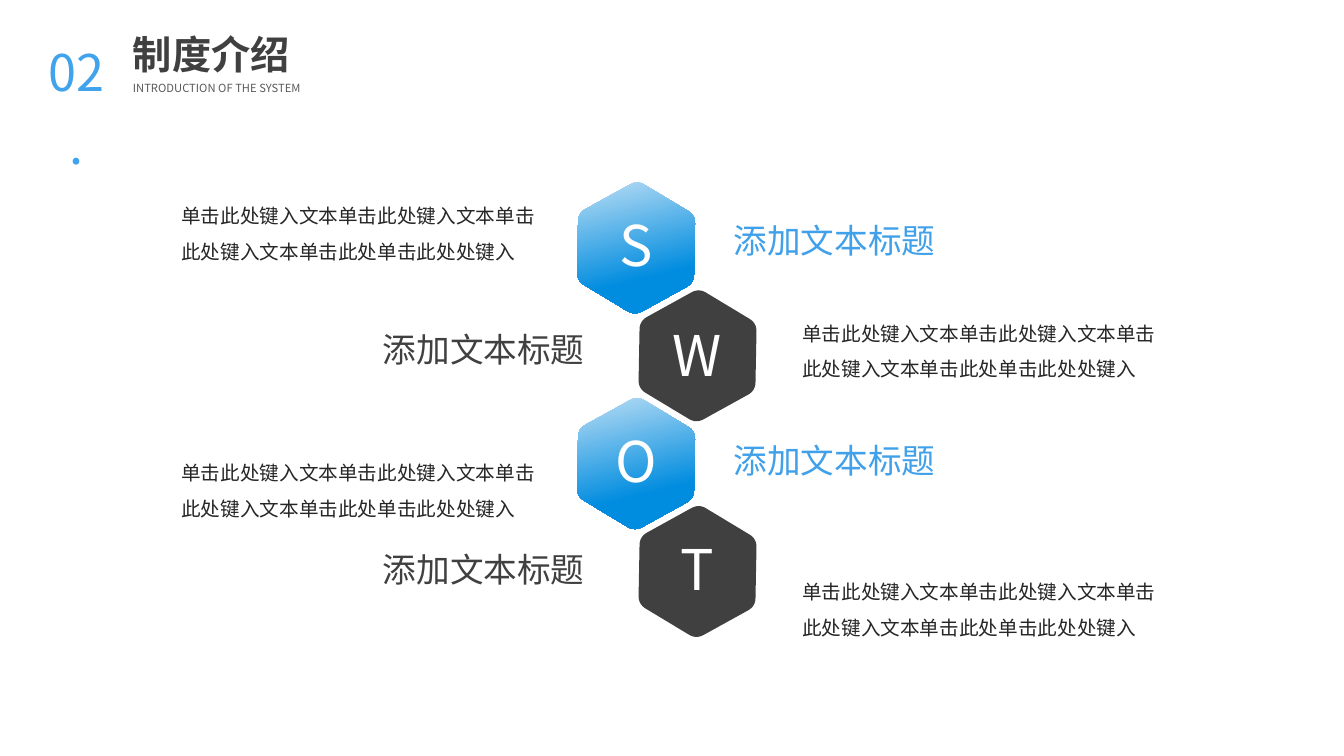
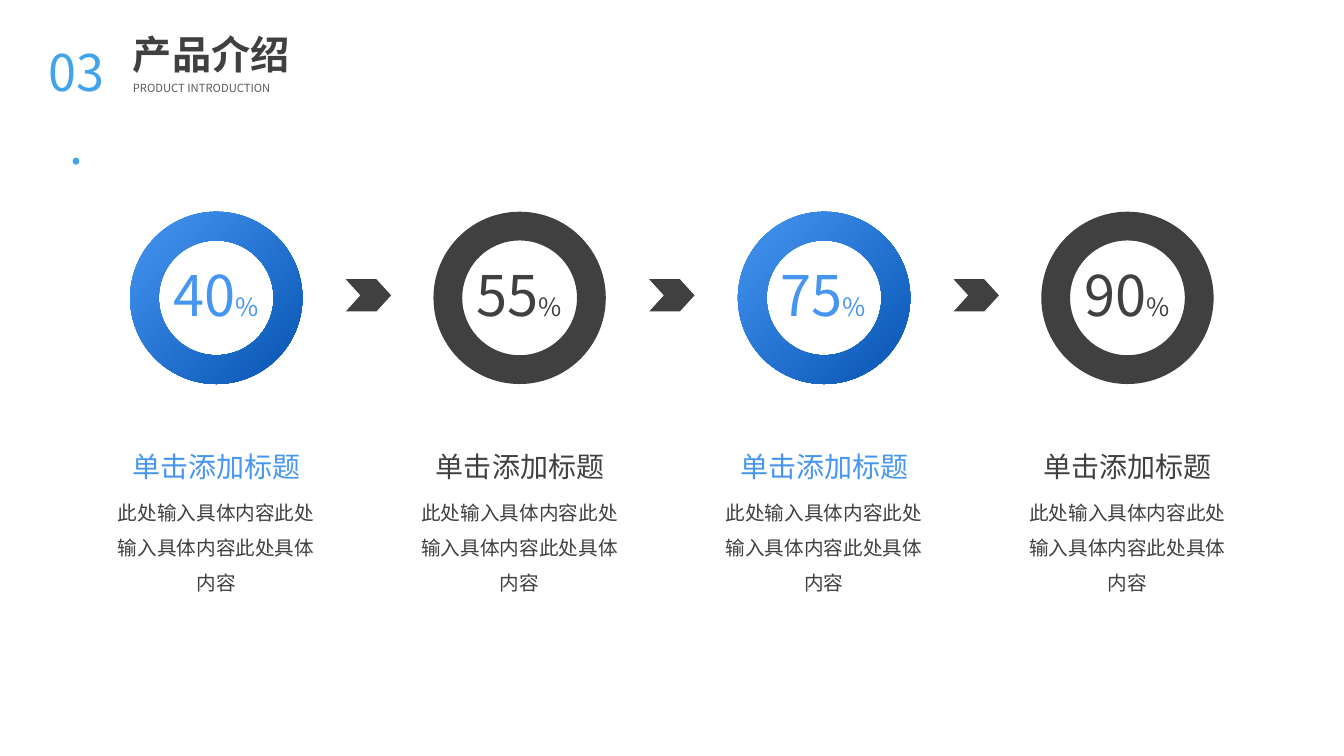
import math

import lxml.etree
import pptx
import pptx.dml.color
import pptx.enum.shapes
import pptx.enum.text
import pptx.oxml.ns
import pptx.util

PX = 9144
SANS = "Noto Sans CJK SC"
DARK = "404040"
INK = "262626"
GREY = "595959"
WHITE = "FFFFFF"
NUMBER_BLUE = "41A3EC"
HEADING_BLUE = "40A0E9"
RING_BLUE = "4696F1"
HEXAGON_GRADIENT = (("E3F0F9", 0), ("008CDF", 0.66), 45)
RING_GRADIENT = ((RING_BLUE, 0), ("0754B3", 1), 45)
LEFT = pptx.enum.text.PP_ALIGN.LEFT
CENTER = pptx.enum.text.PP_ALIGN.CENTER
SHAPES = pptx.enum.shapes.MSO_SHAPE


def color(value):
    """Turn a hex string into a colour."""
    return pptx.dml.color.RGBColor.from_string(value)


class Deck:
    """Hold the style and the current slide."""

    def __init__(self):
        """Start an empty presentation."""
        self.presentation = pptx.Presentation()
        self.presentation.slide_width = pptx.util.Inches(13.333)
        self.presentation.slide_height = 750 * PX
        self.slide = None

    def add_slide(self, number, title, subtitle):
        """Add a slide with its numbered header."""
        layout = self.presentation.slide_layouts[6]
        self.slide = self.presentation.slides.add_slide(layout)
        self.text(title, (122, 25, 209, 57), 28, DARK, font="Arial", bold=True)
        self.text(subtitle, (122, 76, 247, 24), 8, GREY)
        self.text(number, (33, 24, 86, 78), 36, NUMBER_BLUE, CENTER, spacing=1.2)

    def style_run(self, run, size, fill, font=SANS, bold=False):
        """Set the size, colour and typeface of a run."""
        run.font.size = pptx.util.Pt(size)
        run.font.bold = bold
        run.font.color.rgb = color(fill)
        run.font.name = font
        east_asian = lxml.etree.SubElement(
            run._r.get_or_add_rPr(), pptx.oxml.ns.qn("a:ea"))
        east_asian.set("typeface", font)

    def text(self, content, box, size, fill, align=LEFT, spacing=None,
             wrap=True, middle=False, font=SANS, bold=False):
        """Add a text box and return its paragraph."""
        shape = self.slide.shapes.add_textbox(*(length * PX for length in box))
        frame = shape.text_frame
        frame.word_wrap = wrap
        if middle:
            frame.vertical_anchor = pptx.enum.text.MSO_ANCHOR.MIDDLE
        else:
            frame.auto_size = pptx.enum.text.MSO_AUTO_SIZE.SHAPE_TO_FIT_TEXT
        paragraph = frame.paragraphs[0]
        paragraph.text = content
        paragraph.alignment = align
        paragraph.line_spacing = spacing
        self.style_run(paragraph.runs[0], size, fill, font, bold)
        return paragraph

    def paint(self, shape, fill):
        """Fill a shape with a colour or a gradient, without line or shadow."""
        shape.shadow.inherit = False
        shape.line.fill.background()
        if isinstance(fill, str):
            shape.fill.solid()
            shape.fill.fore_color.rgb = color(fill)
            return
        *stops, angle = fill
        shape.fill.gradient()
        shape.fill.gradient_angle = 360 - angle
        for stop, (value, position) in zip(shape.fill.gradient_stops, stops):
            stop.color.rgb = color(value)
            stop.position = position

    def preset(self, kind, box, adjustment, fill):
        """Add a preset shape with one adjustment."""
        shape = self.slide.shapes.add_shape(kind, *(length * PX for length in box))
        shape.adjustments[0] = adjustment
        self.paint(shape, fill)

    def hexagon(self, center_x, center_y, fill, radius=67, cut=0.125, steps=8):
        """Add a turned hexagon with rounded corners."""
        angles = [math.radians(60 * corner) for corner in range(6)]
        corners = [((center_x + radius * math.cos(angle)) * PX,
                    (center_y + radius * math.sin(angle)) * PX) for angle in angles]
        points = []
        for index, corner in enumerate(corners):
            before, after = corners[index - 1], corners[(index + 1) % 6]
            for step in range(steps + 1):
                part = step / steps
                points.append(tuple(
                    c + cut * ((1 - part) ** 2 * (b - c) + part ** 2 * (a - c))
                    for b, c, a in zip(before, corner, after)))
        builder = self.slide.shapes.build_freeform(*points[0], scale=1.0)
        builder.add_line_segments(points[1:], close=True)
        shape = builder.convert_to_shape()
        shape.rotation = 31.1
        self.paint(shape, fill)


def add_swot(deck):
    """Build the slide with the four hexagons."""
    deck.add_slide("02.", "制度介绍", "INTRODUCTION OF THE SYSTEM")
    body = "单击此处键入文本单击此处键入文本单击此处键入文本单击此处单击此处处键入"
    rows = (("S", 204, 186, 213), ("W", 313, 303, 321),
            ("O", 418, 441, 432), ("T", 525, 559, 540))
    sides = ((631, HEXAGON_GRADIENT, HEADING_BLUE, 170, 718),
             (692, DARK, DARK, 786, 370))
    for index, (letter, letter_top, body_top, heading_top) in enumerate(rows):
        center_x, fill, heading_color, body_left, heading_left = sides[index % 2]
        deck.hexagon(center_x, 246 + 107 * index, fill)
        deck.text(letter, (center_x - 60, letter_top, 120, 77), 40, WHITE, CENTER)
        deck.text(body, (body_left, body_top, 377, 77), 14, INK, spacing=1.5)
        deck.text("添加文本标题", (heading_left, heading_top, 222, 50), 24,
                  heading_color, wrap=False)


def add_products(deck):
    """Build the slide with the four rings."""
    deck.add_slide("03.", "产品介绍", "PRODUCT INTRODUCTION")
    body = "此处输入具体内容此处输入具体内容此处具体内容"
    styles = ((RING_GRADIENT, RING_BLUE), (DARK, DARK))
    values = ("40", "55", "75", "90")
    for index, value in enumerate(values):
        left = 129 + round(904 * index / 3)
        fill, text_color = styles[index % 2]
        deck.preset(SHAPES.DONUT, (left, 210, 171, 171), 0.167, fill)
        paragraph = deck.text(value, (left + 30, 254, 110, 77), 40, text_color,
                              CENTER, wrap=False)
        percent = paragraph.add_run()
        percent.text = "%"
        deck.style_run(percent, 18, text_color)
        deck.text("单击添加标题", (left - 26, 444, 224, 41), 20, text_color,
                  CENTER, spacing=0.9, middle=True)
        deck.text(body, (left - 31, 480, 233, 112), 14, DARK, CENTER, spacing=1.5)
        if index < len(values) - 1:
            deck.preset(SHAPES.CHEVRON, (left + 214, 277, 45, 32), 0.456, DARK)


def main():
    """Build and save the presentation."""
    deck = Deck()
    add_swot(deck)
    add_products(deck)
    deck.presentation.save("out.pptx")


if __name__ == "__main__":
    main()
